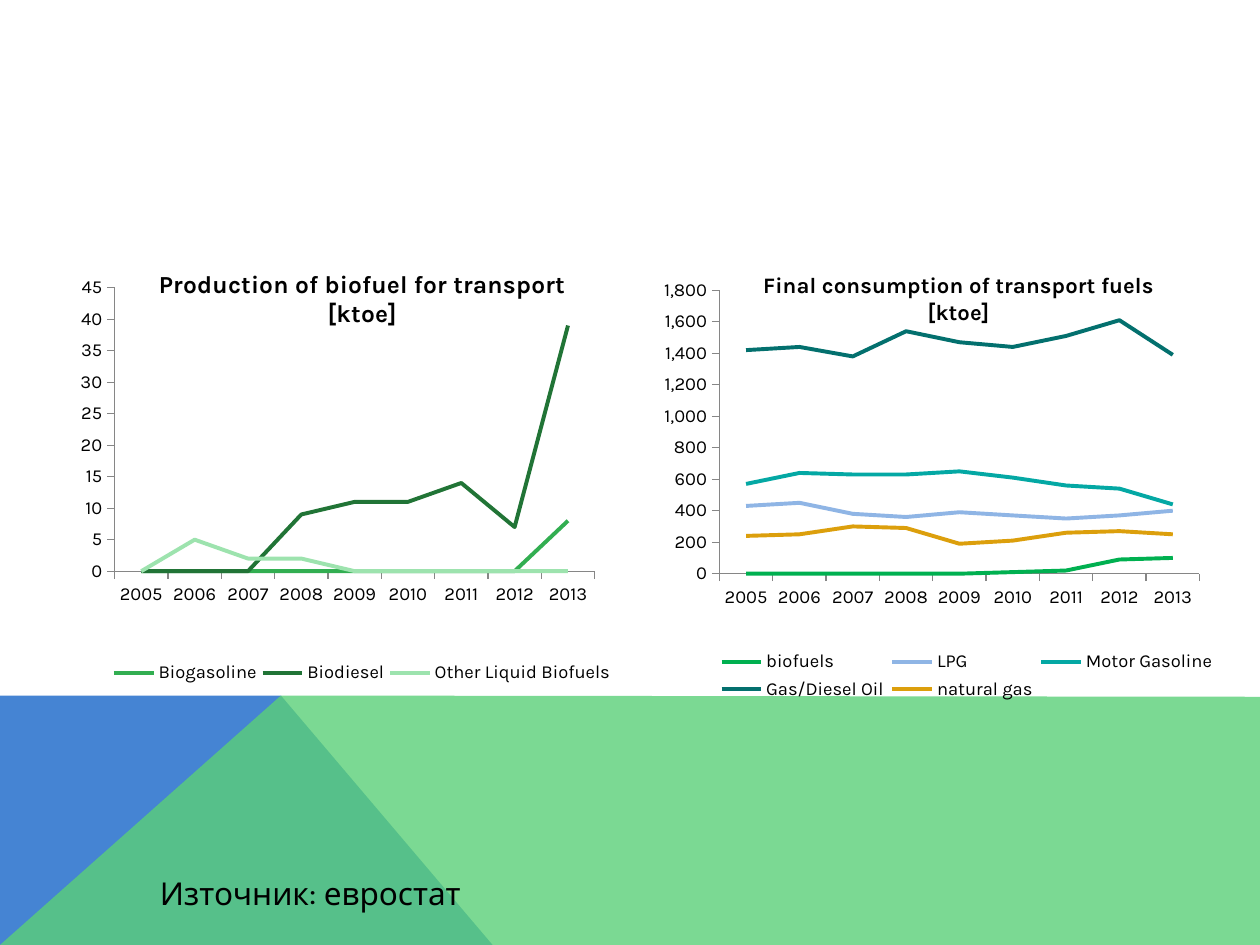
from lxml.etree import SubElement
from pptx import Presentation
from pptx.chart.data import CategoryChartData
from pptx.dml.color import RGBColor
from pptx.enum.chart import XL_CHART_TYPE, XL_LEGEND_POSITION, XL_TICK_MARK
from pptx.oxml import parse_xml
from pptx.oxml.ns import nsdecls, qn
from pptx.util import Inches, Pt

FONT = "Karla"
YEARS = [str(year) for year in range(2005, 2014)]
BANDS = [
    ("4584D3", None, [(0, 7.5), (0, 5.52), (2.23, 5.52), (3.91, 7.5)]),
    ("5BD078", 80, [(0, 7.5), (2.23, 5.52), (10, 5.53), (10, 7.5)]),
]
CHARTS = [
    {
        "title": "Production of biofuel for transport [ktoe]", "title_size": 14,
        "left": 0.31, "top": 1.91, "maximum": 45, "step": 5,
        "series": [
            ("Biogasoline", "32AE51", [0, 0, 0, 0, 0, 0, 0, 0, 8]),
            ("Biodiesel", "217436", [0, 0, 0, 9, 11, 11, 14, 7, 39]),
            ("Other Liquid Biofuels", "9DE3AE", [0, 5, 2, 2, 0, 0, 0, 0, 0]),
        ],
    },
    {
        "title": "Final consumption of transport fuels [ktoe]", "title_size": 12.6,
        "left": 5.11, "top": 1.93, "maximum": 1800, "step": 200,
        "series": [
            ("biofuels", "00B050", [0, 0, 0, 0, 0, 10, 20, 90, 100]),
            ("LPG", "8FB5E5", [430, 450, 380, 360, 390, 370, 350, 370, 400]),
            ("Motor Gasoline", "04A8A4", [570, 640, 630, 630, 650, 610, 560, 540, 440]),
            ("Gas/Diesel Oil", "03706E", [1420, 1440, 1380, 1540, 1470, 1440, 1510, 1610, 1390]),
            ("natural gas", "DC9F0C", [240, 250, 300, 290, 190, 210, 260, 270, 250]),
        ],
    },
]


def color(value):
    return RGBColor.from_string(value)


def style(font, size, bold=False):
    font.name, font.size, font.bold = FONT, Pt(size), bold
    font.color.rgb = color("000000")


def write(frame, text, size, bold=False):
    span = frame.paragraphs[0].add_run()
    span.text = text
    style(span.font, size, bold)


def add_band(page, fill, opacity, points):
    corners = [(Inches(x), Inches(y)) for x, y in points]
    builder = page.shapes.build_freeform(*corners[0], scale=1.0)
    builder.add_line_segments(corners[1:], close=True)
    band = builder.convert_to_shape()
    band.shadow.inherit = False
    band.line.fill.background()
    band.fill.solid()
    band.fill.fore_color.rgb = color(fill)
    if opacity:
        tint = band.fill._xPr.find(".//" + qn("a:srgbClr"))
        SubElement(tint, qn("a:alpha"), val=str(opacity * 1000))


def place(part, after, inner=False, **sizes):
    target = '<c:layoutTarget val="inner"/>' if inner else ""
    modes = "".join(f'<c:{key}Mode val="edge"/>' for key in "xy")
    values = "".join(f'<c:{key} val="{value}"/>' for key, value in sizes.items())
    for old in part.findall(qn("c:layout")):
        part.remove(old)
    layout = parse_xml(f'<c:layout {nsdecls("c")}><c:manualLayout>{target}{modes}{values}'
                       "</c:manualLayout></c:layout>")
    if after is None:
        part.insert(0, layout)
    else:
        part.find(qn(after)).addnext(layout)


def add_line_chart(page, info):
    data = CategoryChartData(number_format="#,##0")
    data.categories = YEARS
    for name, _, values in info["series"]:
        data.add_series(name, values)
    chart = page.shapes.add_chart(
        XL_CHART_TYPE.LINE, Inches(info["left"]), Inches(info["top"]),
        Inches(4.58), Inches(3.67), data).chart
    style(chart.font, 10.5)

    write(chart.chart_title.text_frame, info["title"], info["title_size"], bold=True)
    chart.chart_title.include_in_layout = True
    place(chart.chart_title._element, "c:tx", x=0.2, y=0.05)

    chart.has_legend = True
    chart.legend.position = XL_LEGEND_POSITION.BOTTOM
    chart.legend.include_in_layout = False
    style(chart.legend.font, 10.5)
    place(chart.legend._element, "c:legendPos", x=0.12, y=0.87, w=0.88, h=0.13)
    place(chart._chartSpace.chart.plotArea, None, inner=True, x=0.131, y=0.102, w=0.832, h=0.613)

    for axis in (chart.category_axis, chart.value_axis):
        axis.has_major_gridlines = False
        axis.major_tick_mark = XL_TICK_MARK.OUTSIDE
        axis.format.line.color.rgb = color("868686")
        style(axis.tick_labels.font, 10.5)
    scale = chart.value_axis
    scale.minimum_scale, scale.maximum_scale = 0, info["maximum"]
    scale.major_unit = info["step"]
    scale.tick_labels.number_format = "#,##0"
    scale.tick_labels.number_format_is_linked = False

    chart.plots[0].vary_by_categories = False
    for series, (_, tint, _) in zip(chart.plots[0].series, info["series"]):
        series.smooth = False
        series.format.line.width = Pt(2.25)
        series.format.line.color.rgb = color(tint)


def main():
    """Build the slide on transport biofuels and fuel consumption."""
    deck = Presentation()
    deck.slide_width, deck.slide_height = Inches(10), Inches(7.5)
    page = deck.slides.add_slide(deck.slide_layouts[6])
    for band in BANDS:
        add_band(page, *band)
    for info in CHARTS:
        add_line_chart(page, info)
    box = page.shapes.add_textbox(Inches(1.17), Inches(6.89), Inches(7.72), Inches(0.4))
    box.text_frame.word_wrap = True
    write(box.text_frame, "Източник: евростат", 18)
    deck.save("out.pptx")


if __name__ == "__main__":
    main()
